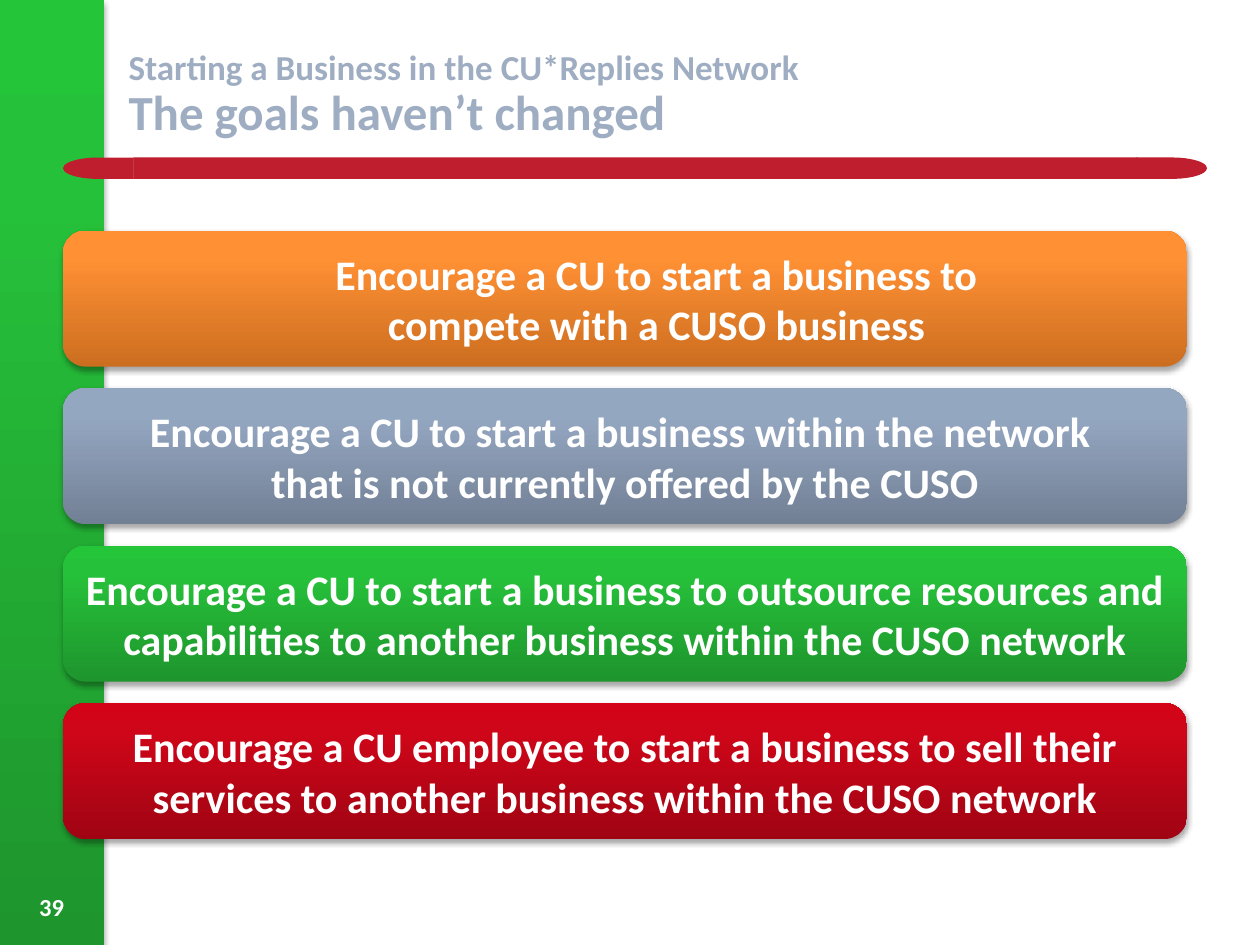
"""Build a slide listing four business goals as stacked gradient banners."""
from copy import deepcopy

from lxml import etree
from pptx import Presentation
from pptx.dml.color import RGBColor
from pptx.enum import shapes, text
from pptx.oxml import ns
from pptx.util import Inches, Pt

FONT = "Calibri"
WHITE = RGBColor(0xFF, 0xFF, 0xFF)
SLATE = RGBColor(0x9E, 0xAD, 0xC2)
CRIMSON = RGBColor(0xBE, 0x1E, 0x2D)
ORANGES = (RGBColor(0xCC, 0x6E, 0x20), RGBColor(0xFF, 0x90, 0x34), RGBColor(0xFF, 0x91, 0x36))
GREYS = (RGBColor(0x72, 0x80, 0x95), RGBColor(0x94, 0xA7, 0xC1), RGBColor(0x94, 0xA7, 0xC3))
GREENS = (RGBColor(0x1E, 0x95, 0x2D), RGBColor(0x26, 0xC1, 0x3A), RGBColor(0x24, 0xC5, 0x39))
REDS = (RGBColor(0xA0, 0x04, 0x13), RGBColor(0xCF, 0x06, 0x19), RGBColor(0xD4, 0x02, 0x16))

GOALS = [
    ("Encourage a CU to start a business to\vcompete with a CUSO business", ORANGES, 1),
    ("Encourage a CU to start a business within the network \v"
     "that is not currently offered by the CUSO", GREYS, 0),
    ("Encourage a CU to start a business to outsource resources and "
     "capabilities to another business within the CUSO network", GREENS, 0),
    ("Encourage a CU employee to start a business to sell their "
     "services to another business within the CUSO network", REDS, 0),
]


def style_font(font, size, color):
    """Apply the bold slide typeface."""
    font.name, font.size, font.bold = FONT, Pt(size), True
    font.color.rgb = color


def add_shape(parent, kind, left, top, width, height):
    """Add a preset shape without line or shadow."""
    shape = parent.add_shape(kind, Inches(left), Inches(top), Inches(width), Inches(height))
    shape.shadow.inherit = False
    shape.line.fill.background()
    return shape


def add_glossy(slide, kind, box, colors):
    """Add a shape with a three-stop upward gradient and a soft shadow."""
    shape = add_shape(slide.shapes, kind, *box)
    shape.fill.gradient()
    shape.fill.gradient_angle = 90
    stop_list = shape._element.spPr.find(".//" + ns.qn("a:gsLst"))
    stop_list.append(deepcopy(stop_list[-1]))
    for stop, position, color in zip(shape.fill.gradient_stops, (0, 0.8, 1), colors):
        stop.position = position
        stop.color.rgb = color
    effects = shape._element.spPr.find(ns.qn("a:effectLst"))
    shadow = etree.SubElement(effects, ns.qn("a:outerShdw"), blurRad=str(Pt(3.1)),
                              dist=str(Pt(1.8)), dir="5400000", rotWithShape="0")
    black = etree.SubElement(shadow, ns.qn("a:srgbClr"), val="000000")
    etree.SubElement(black, ns.qn("a:alpha"), val="35000")
    return shape


def add_rule(slide):
    """Add the red rule with rounded ends as one group."""
    rule = slide.shapes.add_group_shape()
    delay = shapes.MSO_SHAPE.FLOWCHART_DELAY
    pieces = [(shapes.MSO_SHAPE.RECTANGLE, 1.06, 7.97, 0), (delay, 9.02, 0.56, 0),
              (delay, 0.5, 0.56, 180)]
    for kind, left, width, rotation in pieces:
        piece = add_shape(rule.shapes, kind, left, 1.25, width, 0.17)
        piece.rotation = rotation
        piece.fill.solid()
        piece.fill.fore_color.rgb = CRIMSON


def fill_title(slide):
    """Place the title with a small first line over a larger second one."""
    title = slide.shapes.title
    title.left, title.top = Inches(0.92), Inches(0.17)
    title.width, title.height = Inches(8.67), Inches(1)
    title.text_frame.vertical_anchor = text.MSO_ANCHOR.BOTTOM
    heading = title.text_frame.paragraphs[0]
    heading.alignment = text.PP_ALIGN.LEFT
    heading.line_spacing = 0.9
    overline = heading.add_run()
    overline.text = "Starting a Business in the CU*Replies Network"
    style_font(overline.font, 20, SLATE)
    heading.add_line_break()
    headline = heading.add_run()
    headline.text = "The goals haven’t changed"
    style_font(headline.font, 28, SLATE)


def add_page_number(slide, number):
    """Add the page number at the foot of the side rail."""
    frame = slide.shapes.add_textbox(Inches(0.09), Inches(6.83), Inches(0.64),
                                     Inches(0.53)).text_frame
    frame.word_wrap = True
    frame.vertical_anchor = text.MSO_ANCHOR.BOTTOM
    frame.text = number
    frame.paragraphs[0].alignment = text.PP_ALIGN.CENTER
    style_font(frame.paragraphs[0].font, 14, WHITE)


def add_goal(slide, top, wording, colors, level):
    """Add one goal banner."""
    banner = add_glossy(slide, shapes.MSO_SHAPE.ROUNDED_RECTANGLE, (0.5, top, 8.92, 1.08), colors)
    frame = banner.text_frame
    frame.word_wrap = True
    frame.vertical_anchor = text.MSO_ANCHOR.MIDDLE
    goal = frame.paragraphs[0]
    goal.text = wording
    goal.level = level
    goal.alignment = text.PP_ALIGN.CENTER
    style_font(goal.font, 24, WHITE)


def main():
    """Build and save the slide."""
    deck = Presentation()
    deck.slide_width, deck.slide_height = Inches(10), Inches(7.5)
    slide = deck.slides.add_slide(deck.slide_layouts[5])
    add_glossy(slide, shapes.MSO_SHAPE.RECTANGLE, (0, 0, 0.83, 7.5), GREENS)
    add_rule(slide)
    fill_title(slide)
    add_page_number(slide, "39")
    for row, (wording, colors, level) in enumerate(GOALS):
        add_goal(slide, 1.83 + 1.25 * row, wording, colors, level)
    deck.save("out.pptx")


if __name__ == "__main__":
    main()
